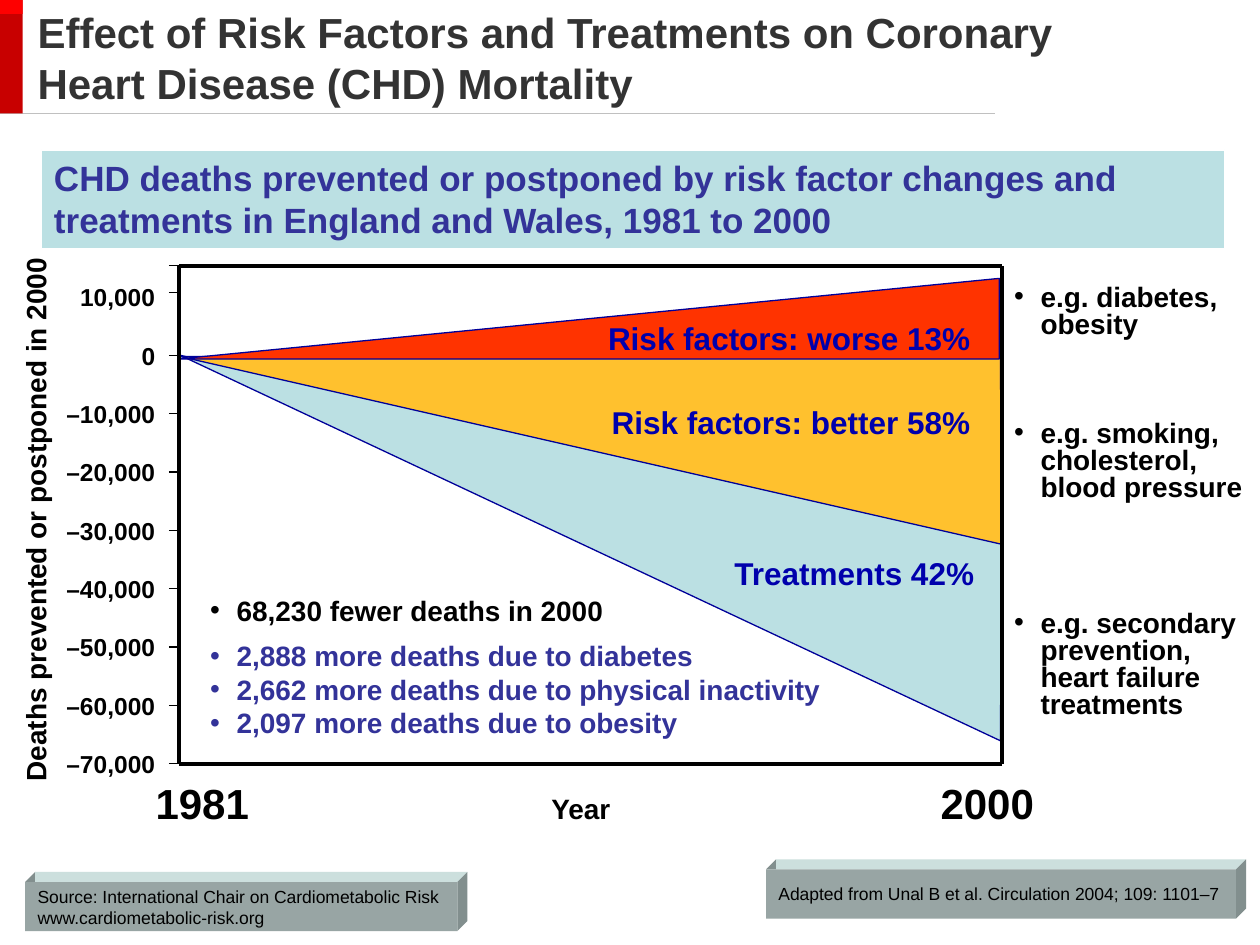
from collections import namedtuple

from lxml import etree
from pptx import Presentation, util as u
from pptx.dml.color import RGBColor
from pptx.enum import shapes, text
from pptx.oxml import ns

BLACK = RGBColor(0, 0, 0)
WHITE = RGBColor(255, 255, 255)
CHARCOAL = RGBColor(0x33, 0x33, 0x33)
SILVER = RGBColor(0xC0, 0xC0, 0xC0)
DARK_RED = RGBColor(0xC8, 0, 0)
BRIGHT_RED = RGBColor(0xFE, 0, 0)
INDIGO = RGBColor(0x33, 0x33, 0x99)
NAVY = RGBColor(0, 0, 0x99)
LABEL_BLUE = RGBColor(0, 0, 0xAC)
PALE_TEAL = RGBColor(0xBB, 0xE0, 0xE3)
AMBER = RGBColor(0xFF, 0xC1, 0x2E)
ORANGE_RED = RGBColor(0xFF, 0x33, 0)
PLATE_FRONT = RGBColor(0x98, 0xA5, 0xA4)
PLATE_TOP = RGBColor(0xCC, 0xDF, 0xDD)
PLATE_SIDE = RGBColor(0x82, 0x8F, 0x8E)

COLUMNS, ROWS = 100, 75
CELL = u.Inches(10) / COLUMNS
LEFT, CENTER, RIGHT = text.PP_ALIGN.LEFT, text.PP_ALIGN.CENTER, text.PP_ALIGN.RIGHT
MIDDLE, TOP = text.MSO_ANCHOR.MIDDLE, text.MSO_ANCHOR.TOP

Box = namedtuple("Box", "left top width height")
Style = namedtuple("Style", "size color bold", defaults=(BLACK, True))


def grid(cells):
    """Turn grid cells into a length."""
    return u.Emu(round(cells * CELL))


def inner(box, left, top, width, height):
    """Return a box placed from the corner of another box."""
    return Box(box.left + left, box.top + top, width, height)


def add_bullet(paragraph):
    """Give a paragraph a hanging round bullet."""
    properties = paragraph._p.get_or_add_pPr()
    properties.set("marL", str(grid(2.1)))
    properties.set("indent", str(-grid(2.1)))
    etree.SubElement(properties, ns.qn("a:buFont")).set("typeface", "Arial")
    etree.SubElement(properties, ns.qn("a:buChar")).set("char", "•")


def write(shape, lines, style, align=LEFT, anchor=MIDDLE, bullet=False, spacing=None, wrap=True):
    """Write paragraphs run by run into a shape."""
    frame = shape.text_frame
    frame.word_wrap = wrap
    frame.vertical_anchor = anchor
    for index, line in enumerate(lines):
        paragraph = frame.add_paragraph() if index else frame.paragraphs[0]
        paragraph.alignment = align
        if spacing:
            paragraph.line_spacing = spacing
        if bullet:
            add_bullet(paragraph)
        for part_index, part in enumerate(line.split("\n")):
            if part_index:
                paragraph.add_line_break()
            run = paragraph.add_run()
            run.text = part
            run.font.name = "Arial"
            run.font.size = u.Pt(style.size)
            run.font.bold = style.bold
            run.font.color.rgb = style.color


def add_text(slide, box, lines, style, **layout):
    """Add a text box and return it."""
    shape = slide.shapes.add_textbox(*map(grid, box))
    write(shape, lines, style, **layout)
    return shape


def paint(shape, fill, line=None):
    """Set fill and outline and drop the shadow."""
    shape.shadow.inherit = False
    shape.fill.solid()
    shape.fill.fore_color.rgb = fill
    if line is None:
        shape.line.fill.background()
    else:
        shape.line.color.rgb = line
        shape.line.width = u.Pt(0.75)


def add_rectangle(slide, box, fill, line=None):
    """Add a filled rectangle."""
    shape = slide.shapes.add_shape(shapes.MSO_SHAPE.RECTANGLE, *map(grid, box))
    paint(shape, fill, line)
    return shape


def add_polygon(slide, box, points, fill, line=None):
    """Add a closed outline with points counted from the box corner."""
    corners = [(grid(box.left + x), grid(box.top + y)) for x, y in points]
    builder = slide.shapes.build_freeform(*corners[0])
    builder.add_line_segments(corners[1:], close=True)
    paint(builder.convert_to_shape(), fill, line)


def add_line(slide, start, end, color=BLACK, width=0.75):
    """Add a straight line without shadow."""
    line = slide.shapes.add_connector(
        shapes.MSO_CONNECTOR.STRAIGHT, *map(grid, start), *map(grid, end))
    line.line.color.rgb = color
    line.line.width = u.Pt(width)
    etree.SubElement(line._element.spPr, ns.qn("a:effectLst"))


def add_header(slide, box):
    """Place the red tab, the rule and the title."""
    bottom = box.top + box.height
    add_line(slide, (box.left, bottom), (box.left + 79, bottom), SILVER)
    add_rectangle(slide, inner(box, 0, 0, 1.8, box.height), DARK_RED)
    add_rectangle(slide, inner(box, 0, 0, 1.8, 1.1), BRIGHT_RED)
    title = "Effect of Risk Factors and Treatments on Coronary Heart Disease (CHD) Mortality"
    add_text(slide, inner(box, 2, 0, 90.6, box.height + 0.1), [title], Style(24, CHARCOAL))


def add_subtitle(slide, box):
    """Place the subtitle band."""
    band = add_rectangle(slide, box, PALE_TEAL, WHITE)
    subtitle = ("CHD deaths prevented or postponed by risk factor changes and "
                "treatments in England and Wales, 1981 to 2000")
    write(band, [subtitle], Style(20, INDIGO), anchor=TOP)


def add_wedges(slide, box):
    """Place the three wedges and their labels in the plot."""
    width, zero = box.width, 7.1
    wedges = [
        (PALE_TEAL, [(0.1, zero), (width - 0.1, 37.7), (width, 22)]),
        (AMBER, [(0.1, zero + 0.1), (width - 0.1, zero), (width, 22.1)]),
        (ORANGE_RED, [(-0.1, zero + 0.3), (width - 0.2, 1), (width - 0.2, zero + 0.3)]),
    ]
    for color, points in wedges:
        add_polygon(slide, box, points, color, NAVY)
    labels = [("Risk factors: worse 13%", 29.3, 3.7),
              ("Risk factors: better 58%", 29.3, 10.4),
              ("Treatments 42%", 29.6, 22.4)]
    for label, left, top in labels:
        add_text(slide, inner(box, left, top, 34.5, 4), [label],
                 Style(18, LABEL_BLUE), align=RIGHT)


def add_axes(slide, box):
    """Place the frame, the ticks and the axis labels."""
    left, top = box.left, box.top
    right, bottom = left + box.width, top + box.height
    corners = [(left, top), (right, top), (right, bottom), (left, bottom)]
    for start, end in zip(corners, corners[1:] + corners[:1]):
        add_line(slide, start, end, width=2.25)
    add_line(slide, (left - 0.8, top), (left, top))
    pitch, zero, highest = 4.63, 7.1, 2.1
    for value in range(10000, -80000, -10000):
        offset = zero - pitch * value / 10000
        tick = top + max(offset, zero) if value <= 0 else top + highest
        add_line(slide, (left - 0.8, tick), (left, tick))
        label = f"{value:,}".replace("-", "–")
        add_text(slide, inner(box, -11.5, offset - 1.65, 10.6, 3.3), [label],
                 Style(14), align=RIGHT)
    for label, size, center, drop in [("1981", 24, 1.85, 3.1), ("Year", 16, 31.9, 3.55),
                                      ("2000", 24, 64.15, 3.1)]:
        add_text(slide, inner(box, center - 13.45, box.height + drop - 2, 26.9, 4),
                 [label], Style(size), align=CENTER)
    name = add_text(slide, inner(box, -36.3, 18.3, 49.8, 3.7),
                    ["Deaths prevented or postponed in 2000"], Style(16), align=CENTER)
    name.rotation = 270


def add_findings(slide, box):
    """Place the bulleted death counts."""
    add_text(slide, inner(box, 0, 0, box.width, 3.7),
             ["68,230 fewer deaths in 2000"], Style(16), bullet=True)
    causes = ["diabetes", "physical inactivity", "obesity"]
    counts = ["2,888", "2,662", "2,097"]
    lines = [f"{count} more deaths due to {cause}" for count, cause in zip(counts, causes)]
    add_text(slide, inner(box, 0, 3.6, box.width, 9), lines, Style(16, INDIGO), bullet=True)


def add_examples(slide, box):
    """Place the examples beside the wedges."""
    examples = [("e.g. diabetes, obesity", 0, 5.3),
                ("e.g. smoking, \ncholesterol, blood pressure", 10.8, 7.4),
                ("e.g. secondary prevention, \nheart failure treatments", 25.9, 9.5)]
    for example, top, height in examples:
        add_text(slide, inner(box, 0, top, box.width, height), [example], Style(16),
                 anchor=TOP, bullet=True, spacing=0.8)


def add_plate(slide, box, lines, wrap):
    """Place a raised plate with a citation."""
    depth, width, height = 0.8, box.width, box.height
    facets = [
        (PLATE_SIDE, [(0, 0), (depth, -depth), (depth, 0)]),
        (PLATE_TOP, [(depth, 0), (depth, -depth), (width + depth, -depth), (width, 0)]),
        (PLATE_SIDE, [(width, 0), (width + depth, -depth),
                      (width + depth, height - depth), (width, height)]),
    ]
    for color, points in facets:
        add_polygon(slide, box, points, color)
    front = add_rectangle(slide, box, PLATE_FRONT)
    write(front, lines, Style(10, BLACK, False), wrap=wrap)


def main():
    """Build the slide and save it."""
    presentation = Presentation()
    presentation.slide_width, presentation.slide_height = grid(COLUMNS), grid(ROWS)
    slide = presentation.slides.add_slide(presentation.slide_layouts[6])
    plot = Box(14.2, 21.1, 65.3, 39.5)
    add_header(slide, Box(0, 0, COLUMNS, 9))
    add_wedges(slide, plot)
    add_axes(slide, plot)
    add_findings(slide, Box(15.7, 46.6, 53.2, 12.6))
    add_examples(slide, Box(79.5, 22.2, 20.5, 35.4))
    add_subtitle(slide, Box(3.3, 11.9, 93.9, 7.8))
    add_plate(slide, Box(2, 70, 34.3, 3.9),
              ["Source: International Chair on Cardiometabolic Risk",
               "www.cardiometabolic-risk.org"], wrap=False)
    add_plate(slide, Box(60.8, 69, 37.3, 3.9),
              ["Adapted from Unal B et al. Circulation 2004; 109: 1101–7"], wrap=True)
    presentation.save("out.pptx")


if __name__ == "__main__":
    main()
